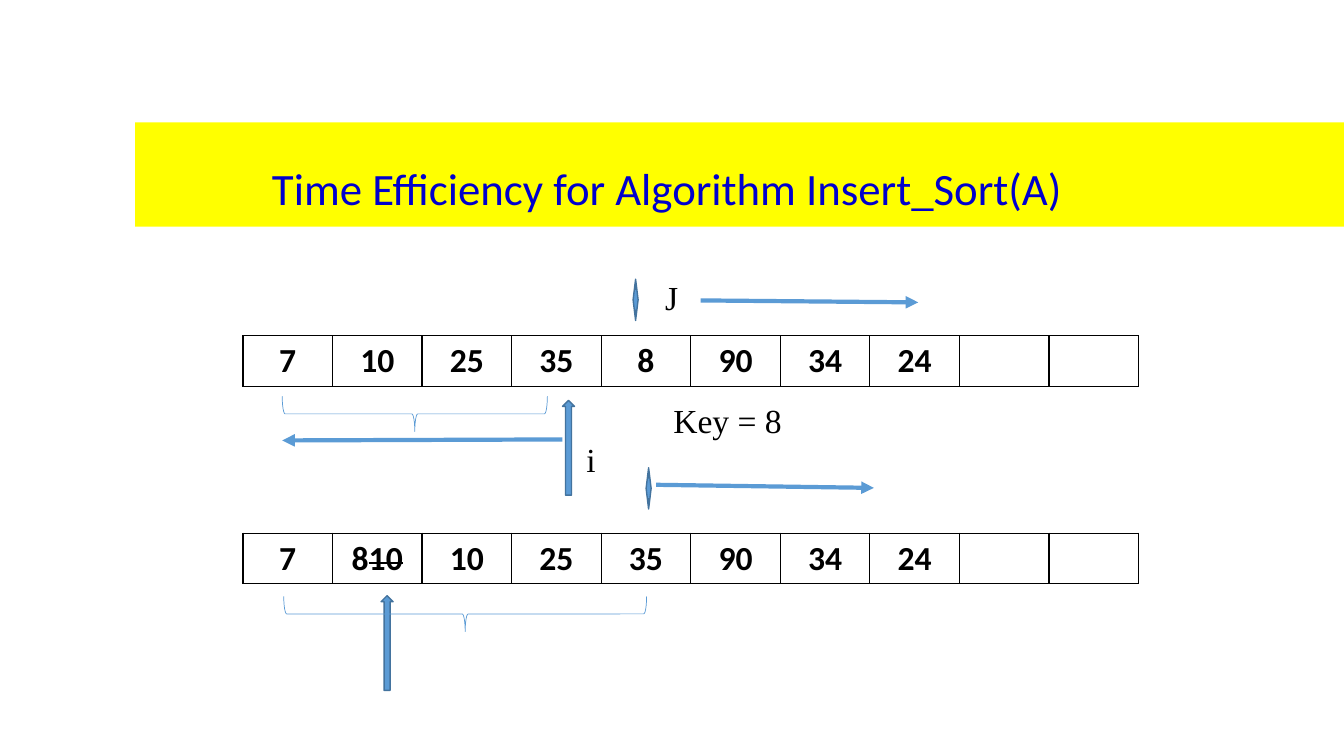
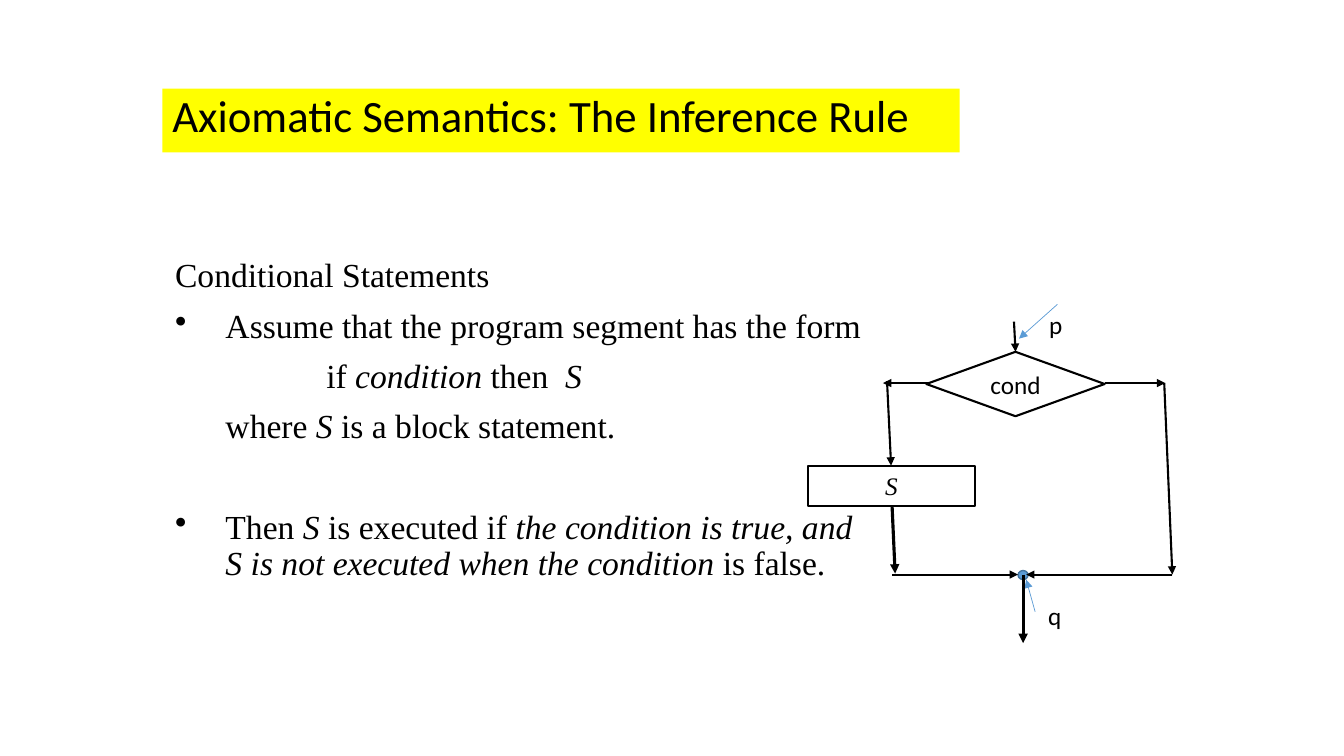
import pptx
import pptx.dml.color
import pptx.enum.shapes
import pptx.enum.text
import pptx.oxml.ns
import pptx.util
from lxml import etree

Pt = pptx.util.Pt
RGBColor = pptx.dml.color.RGBColor
Shape = pptx.enum.shapes.MSO_SHAPE
Anchor = pptx.enum.text.MSO_ANCHOR
Align = pptx.enum.text.PP_ALIGN
qn = pptx.oxml.ns.qn

YELLOW = RGBColor(0xFF, 0xFF, 0x00)
TITLE_BLUE = RGBColor(0x00, 0x00, 0xCC)
BLUE = RGBColor(0x5B, 0x9B, 0xD5)
DARK_BLUE = RGBColor(0x43, 0x73, 0x9E)
BLACK = RGBColor(0x00, 0x00, 0x00)
WHITE = RGBColor(0xFF, 0xFF, 0xFF)
SANS = "Calibri"
SERIF = "Times New Roman"


def write_text(frame, text, size=24, font=SERIF, color=BLACK, bold=False,
               align=Align.LEFT, anchor=Anchor.TOP, spacing=1.0, before=0,
               margin=0, bullet=False):
    frame.word_wrap = True
    frame.vertical_anchor = anchor
    paragraph = frame.paragraphs[0]
    if paragraph.runs:
        paragraph = frame.add_paragraph()
    paragraph.alignment = align
    paragraph.line_spacing = spacing
    paragraph.space_before = Pt(before)
    properties = paragraph._p.get_or_add_pPr()
    properties.set("marL", str(Pt(margin)))
    properties.set("indent", str(Pt(-margin if bullet else 0)))
    if bullet:
        etree.SubElement(properties, qn("a:buChar")).set("char", "•")
    for content, mark in [(text, "")] if isinstance(text, str) else text:
        run = paragraph.add_run()
        run.text = content
        run.font.size = Pt(size)
        run.font.name = font
        run.font.color.rgb = color
        run.font.bold = bold
        run.font.italic = mark == "italic"
        if mark == "strike":
            run._r.get_or_add_rPr().set("strike", "sngStrike")


presentation = pptx.Presentation()
presentation.slide_width = Pt(960)
presentation.slide_height = Pt(540)
sorting, rule = [
    presentation.slides.add_slide(presentation.slide_layouts[6]) for _ in range(2)
]

body = rule.shapes.add_textbox(Pt(118), Pt(181.4), Pt(509), Pt(289.4)).text_frame
for text, layout in [
    ("Conditional Statements", {}),
    ("Assume that the program segment has the form", {"margin": 36, "bullet": True}),
    ([("if", ""), (" condition ", "italic"), ("then ", ""), (" S", "italic")],
     {"margin": 108}),
    ([("where", ""), (" S ", "italic"), ("is a block statement.", "")], {"margin": 36}),
    ([("Then ", ""), ("S", "italic"), (" is executed if ", ""),
      ("the condition is true, and S is not executed when the condition", "italic"),
      (" is false.", "")], {"margin": 36, "bullet": True, "before": 46}),
]:
    write_text(body, text, spacing=0.9, **{"before": 10, **layout})

cond_style = {"size": 18, "align": Align.CENTER, "anchor": Anchor.MIDDLE}
for slide, kind, left, top, width, height, fill, line, weight, text, style in [
    (sorting, Shape.RECTANGLE, 96.5, 87.5, 864, 74.5, YELLOW, None, 0, "", {}),
    (sorting, Shape.LEFT_RIGHT_ARROW, 452.2, 199.4, 3.6, 29.5, BLUE, DARK_BLUE, 1, "", {}),
    (sorting, Shape.LEFT_RIGHT_ARROW, 461.5, 334.1, 3.6, 29.5, BLUE, DARK_BLUE, 1, "", {}),
    (sorting, Shape.UP_ARROW, 401.8, 286, 8.6, 67.7, BLUE, DARK_BLUE, 1, "", {}),
    (sorting, Shape.UP_ARROW, 272.2, 425.5, 8.6, 67.7, BLUE, DARK_BLUE, 1, "", {}),
    (sorting, Shape.LEFT_BRACE, 283.7, 200.9, 25.2, 189.4, None, BLUE, 0.5, "", {}),
    (sorting, Shape.LEFT_BRACE, 319.7, 308.9, 25.2, 259.2, None, BLUE, 0.5, "", {}),
    (rule, Shape.RECTANGLE, 116, 63.4, 569.5, 45.4, YELLOW, None, 0,
     "Axiomatic Semantics: The Inference Rule",
     {"size": 32, "font": SANS, "spacing": 0.9}),
    (rule, Shape.DIAMOND, 661.7, 251.3, 127.4, 46, WHITE, BLACK, 1.5, "cond",
     {"font": SANS, **cond_style}),
    (rule, Shape.RECTANGLE, 577.4, 332.6, 118.8, 28.8, None, BLACK, 1.5,
     [("S", "italic")], cond_style),
    (rule, Shape.OVAL, 727.2, 407.5, 7.2, 6.5, BLUE, DARK_BLUE, 1, "", {}),
]:
    shape = slide.shapes.add_shape(kind, Pt(left), Pt(top), Pt(width), Pt(height))
    shape.shadow.inherit = False
    if fill is None:
        shape.fill.background()
    else:
        shape.fill.solid()
        shape.fill.fore_color.rgb = fill
    if line is None:
        shape.line.fill.background()
    else:
        shape.line.color.rgb = line
        shape.line.width = Pt(weight)
    if kind == Shape.LEFT_BRACE:
        shape.rotation = 270
    if text:
        write_text(shape.text_frame, text, **style)

for slide, left, top, width, height, text, style in [
    (sorting, 187.2, 108.7, 613.4, 46.8, "Time Efficiency for Algorithm Insert_Sort(A)",
     {"size": 32, "font": SANS, "color": TITLE_BLUE, "spacing": 1.07}),
    (sorting, 468, 194.4, 56.2, 36, "J", {}),
    (sorting, 411.8, 310.3, 56.2, 36, "i", {}),
    (sorting, 473.8, 282.2, 104.4, 36, "Key = 8", {}),
    (rule, 742.3, 217.4, 24.5, 28.8, "p", {"size": 18, "font": SANS}),
    (rule, 741.6, 425.5, 24.5, 28.8, "q", {"size": 18, "font": SANS}),
]:
    box = slide.shapes.add_textbox(Pt(left), Pt(top), Pt(width), Pt(height))
    write_text(box.text_frame, text, **style)

for top, values in [
    (239.8, ["7", "10", "25", "35", "8", "90", "34", "24", "", ""]),
    (380.9, ["7", [("8", ""), ("10", "strike")], "10", "25", "35", "90", "34", "24", "", ""]),
]:
    table = sorting.shapes.add_table(
        1, len(values), Pt(173.5), Pt(top), Pt(640), Pt(36)
    ).table
    table.first_row = False
    table.horz_banding = False
    table.rows[0].height = Pt(36)
    for cell, value in zip(table.rows[0].cells, values):
        if value:
            write_text(cell.text_frame, value, font=SANS, bold=True, align=Align.CENTER)
        properties = cell._tc.get_or_add_tcPr()
        for side in ("lnL", "lnR", "lnT", "lnB"):
            border = etree.SubElement(properties, qn("a:" + side), w=str(Pt(1)))
            paint = etree.SubElement(border, qn("a:solidFill"))
            etree.SubElement(paint, qn("a:srgbClr"), val=str(BLACK))
        cell.fill.solid()
        cell.fill.fore_color.rgb = WHITE

for slide, color, weight, start_x, start_y, end_x, end_y in [
    (sorting, BLUE, 3, 500.4, 214.6, 655.9, 216),
    (sorting, BLUE, 3, 401.8, 313.9, 201.6, 314.6),
    (sorting, BLUE, 3, 468.7, 346.3, 624.2, 348.5),
    (rule, BLACK, 1.5, 633.6, 272.2, 636.5, 332.6),
    (rule, BLACK, 1.5, 724.3, 229.7, 725.4, 251.3),
    (rule, BLACK, 1.5, 663.1, 273.6, 630.7, 273.6),
    (rule, BLACK, 1.5, 831.6, 273.6, 837.4, 410.4),
    (rule, BLACK, 1.5, 637.2, 410.4, 727.2, 410.4),
    (rule, BLACK, 1.5, 789.1, 273.6, 832.3, 273.6),
    (rule, BLUE, 0.5, 755.3, 217.4, 727.9, 241.9),
    (rule, BLUE, 0.5, 739.4, 437, 733, 414),
    (rule, BLACK, 2.25, 637.2, 361.4, 639.4, 409.7),
    (rule, BLACK, 1.5, 837.4, 410.4, 733, 410.4),
    (rule, BLACK, 2.25, 730.8, 410.4, 730.8, 459.4),
]:
    arrow = slide.shapes.add_connector(
        pptx.enum.shapes.MSO_CONNECTOR.STRAIGHT,
        Pt(start_x), Pt(start_y), Pt(end_x), Pt(end_y),
    )
    arrow.line.color.rgb = color
    arrow.line.width = Pt(weight)
    properties = arrow._element.spPr
    etree.SubElement(properties.find(qn("a:ln")), qn("a:tailEnd"), type="triangle")
    etree.SubElement(properties, qn("a:effectLst"))

presentation.save("out.pptx")
